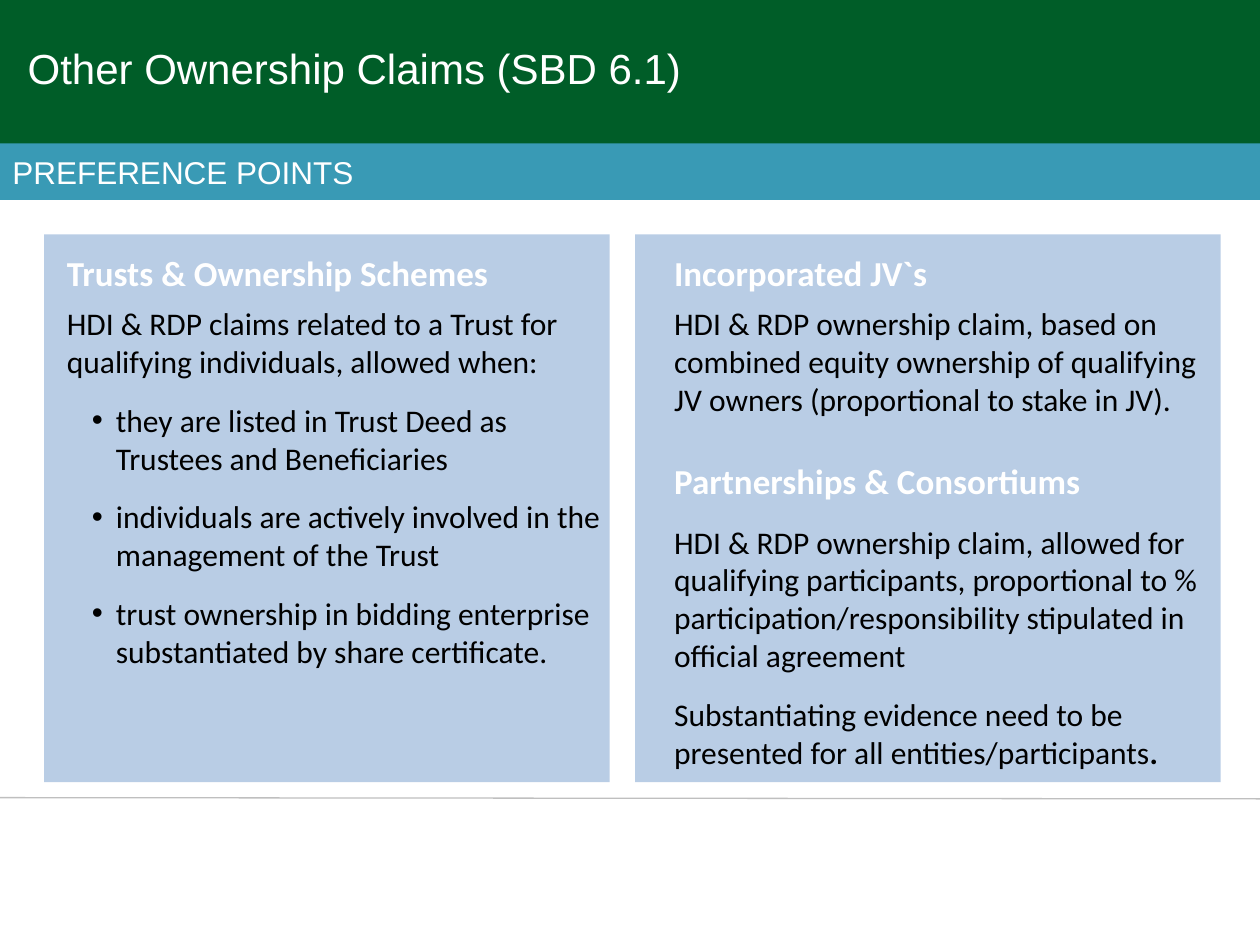
from lxml.etree import SubElement
from pptx import Presentation
from pptx.dml.color import RGBColor
from pptx.enum.shapes import MSO_CONNECTOR, MSO_SHAPE
from pptx.enum.text import MSO_ANCHOR, MSO_AUTO_SIZE, PP_ALIGN
from pptx.oxml.ns import qn
from pptx.util import Pt

COLORS = {
    "green": "005D28",
    "teal": "399AB5",
    "panel": "B9CDE5",
    "rule": "BFBFBF",
    "white": "FFFFFF",
    "black": "000000",
}


def color(name):
    return RGBColor.from_string(COLORS[name])


def write(paragraph, text, font="Calibri", size=18, fill="black", bold=False):
    span = paragraph.add_run()
    span.text = text
    span.font.name = font
    span.font.size = Pt(size)
    span.font.bold = bold
    span.font.color.rgb = color(fill)


class SlideBuilder:
    heading = {"size": 20, "fill": "white", "bold": True}

    def __init__(self, deck):
        self.page = deck.slides.add_slide(deck.slide_layouts[3])

    def block(self, left, top, width, height, fill):
        box = self.page.shapes.add_shape(
            MSO_SHAPE.RECTANGLE, Pt(left), Pt(top), Pt(width), Pt(height))
        box.shadow.inherit = False
        box.fill.solid()
        box.fill.fore_color.rgb = color(fill)
        box.line.fill.background()
        return box

    def rule(self, left, top, right, bottom):
        line = self.page.shapes.add_connector(
            MSO_CONNECTOR.STRAIGHT, Pt(left), Pt(top), Pt(right), Pt(bottom))
        line.line.color.rgb = color("rule")
        line.line.width = Pt(0.75)
        SubElement(line.element.spPr, qn("a:effectLst"))

    def banner(self, text, *bounds):
        box = self.block(*bounds, "teal")
        box.text_frame.vertical_anchor = MSO_ANCHOR.MIDDLE
        paragraph = box.text_frame.paragraphs[0]
        paragraph.alignment = PP_ALIGN.LEFT
        write(paragraph, text, font="Arial", fill="white")

    def place(self, holder, left, top, width, height):
        holder.left, holder.top = Pt(left), Pt(top)
        holder.width, holder.height = Pt(width), Pt(height)
        holder.element.getparent().append(holder.element)
        holder.text_frame.word_wrap = True
        return holder.text_frame

    def title(self, text, *bounds):
        frame = self.place(self.page.shapes.title, *bounds)
        frame.auto_size = MSO_AUTO_SIZE.NONE
        frame.vertical_anchor = MSO_ANCHOR.BOTTOM
        paragraph = frame.paragraphs[0]
        paragraph.alignment = PP_ALIGN.LEFT
        write(paragraph, text, font="Arial", size=24, fill="white")

    def body(self, index, items, *bounds, margin=0):
        frame = self.place(self.page.placeholders[index], *bounds)
        frame.auto_size = MSO_AUTO_SIZE.SHAPE_TO_FIT_TEXT
        for number, (kind, text, *ending) in enumerate(items):
            paragraph = frame.add_paragraph() if number else frame.paragraphs[0]
            self.indent(paragraph, kind, margin)
            paragraph.alignment = PP_ALIGN.LEFT
            paragraph.line_spacing = 1.5 if kind == "heading" else 1.0
            paragraph.space_before = paragraph.space_after = Pt(6 if number else 0)
            write(paragraph, text, **(self.heading if kind == "heading" else {}))
            for tail in ending:
                write(paragraph, tail, bold=True)

    def indent(self, paragraph, kind, margin):
        bulleted = kind == "bullet"
        paragraph.level = int(bulleted)
        properties = paragraph._p.get_or_add_pPr()
        properties.set("marL", str(Pt(28 if bulleted else margin)))
        properties.set("indent", str(Pt(-13.7 if bulleted else 0)))
        if bulleted:
            SubElement(properties, qn("a:buFont"), typeface="Arial")
            SubElement(properties, qn("a:buChar"), char="•")
        else:
            SubElement(properties, qn("a:buNone"))


TRUSTS = [
    ("heading", "Trusts & Ownership Schemes"),
    ("text", "HDI & RDP claims related to a Trust for qualifying individuals, allowed when:"),
    ("bullet", "they are listed in Trust Deed as Trustees and Beneficiaries"),
    ("bullet", "individuals are actively involved in the management of the Trust"),
    ("bullet", "trust ownership in bidding enterprise substantiated by share certificate."),
]
VENTURES = [
    ("heading", "Incorporated JV`s"),
    ("text", "HDI & RDP ownership claim, based on combined equity ownership of "
             "qualifying JV owners (proportional to stake in JV)."),
    ("heading", "Partnerships & Consortiums"),
    ("text", "HDI & RDP ownership claim, allowed for qualifying participants, proportional "
             "to % participation/responsibility stipulated in official agreement"),
    ("text", "Substantiating evidence need to be presented for all entities/participants", "."),
]


def main():
    deck = Presentation()
    deck.slide_width, deck.slide_height = Pt(720), Pt(540)
    slide = SlideBuilder(deck)
    slide.block(0, 0, 720, 84, "green")
    slide.rule(0, 455.8, 720, 456.5)
    for left, width in ((25.2, 323.2), (362.9, 334.6)):
        slide.block(left, 134, width, 313, "panel")
    slide.body(2, VENTURES, 357.1, 128.2, 351.4, 319, margin=20.9)
    slide.title("Other Ownership Claims (SBD 6.1)", 8.6, 20.9, 566, 36)
    slide.body(1, TRUSTS, 31, 128.2, 330.5, 260.6)
    slide.banner("PREFERENCE POINTS", 0, 82, 720, 32.2)
    deck.save("out.pptx")


if __name__ == "__main__":
    main()
